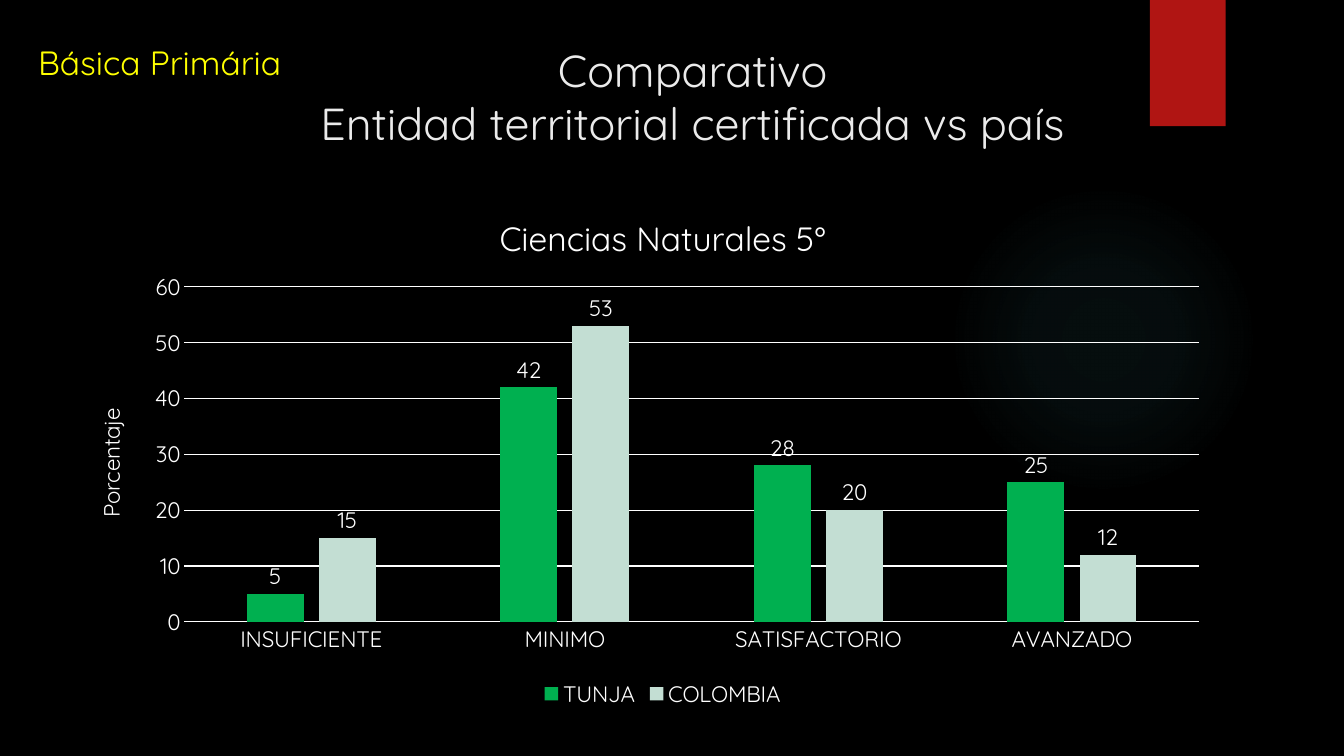
from lxml import etree
from pptx import Presentation
from pptx.chart.data import CategoryChartData
from pptx.dml.color import RGBColor
from pptx.enum.chart import (XL_CHART_TYPE, XL_LABEL_POSITION,
                             XL_LEGEND_POSITION, XL_TICK_MARK)
from pptx.enum.shapes import MSO_SHAPE
from pptx.enum.text import PP_ALIGN
from pptx.oxml import parse_xml
from pptx.oxml.ns import nsdecls, qn
from pptx.util import Cm, Pt

COLUMNS = XL_CHART_TYPE.COLUMN_CLUSTERED
OUTSIDE = XL_LABEL_POSITION.OUTSIDE_END
BOTTOM = XL_LEGEND_POSITION.BOTTOM
NO_TICK = XL_TICK_MARK.NONE
RECT, OVAL = MSO_SHAPE.RECTANGLE, MSO_SHAPE.OVAL
LEFT, CENTER = PP_ALIGN.LEFT, PP_ALIGN.CENTER

COLORS = {
    "back": "000000", "glow": "50B9C1", "ribbon": "B01513",
    "title": "EBEBEB", "level": "FFFF00", "white": "FFFFFF",
    "TUNJA": "00B050", "COLOMBIA": "C3DED3",
}
LEVELS = ["INSUFICIENTE", "MINIMO", "SATISFACTORIO", "AVANZADO"]
SCORES = {"TUNJA": [5, 42, 28, 25], "COLOMBIA": [15, 53, 20, 12]}


def rgb(name):
    return RGBColor.from_string(COLORS[name])


def paint(fill, name):
    fill.solid()
    fill.fore_color.rgb = rgb(name)


class Deck:
    font = "Quicksand"

    def __init__(self, width, height):
        self.prs = Presentation()
        self.prs.slide_width, self.prs.slide_height = Cm(width), Cm(height)
        self.slide = self.prs.slides.add_slide(self.prs.slide_layouts[6])
        paint(self.slide.background.fill, "back")

    def style(self, font, size, color="white"):
        font.name, font.size, font.bold = self.font, Pt(size), False
        font.color.rgb = rgb(color)

    def shape(self, kind, box, color):
        shape = self.slide.shapes.add_shape(kind, *map(Cm, box))
        shape.shadow.inherit = False
        shape.line.fill.background()
        paint(shape.fill, color)
        return shape

    def glow(self, box, color, stops):
        """Draw a round gradient; stops are (position, opacity) in percent."""
        props = self.shape(OVAL, box, color)._element.spPr
        grad = parse_xml(f'<a:gradFill {nsdecls("a")}><a:gsLst/><a:path path="circle">'
                         '<a:fillToRect l="50000" t="50000" r="50000" b="50000"/>'
                         '</a:path></a:gradFill>')
        for pos, alpha in stops:
            stop = etree.SubElement(grad[0], qn("a:gs"), pos=str(pos * 1000))
            tint = etree.SubElement(stop, qn("a:srgbClr"), val=COLORS[color])
            etree.SubElement(tint, qn("a:alpha"), val=str(alpha * 1000))
        props.replace(props.find(qn("a:solidFill")), grad)

    def text(self, text, box, size, color, align=LEFT):
        frame = self.slide.shapes.add_textbox(*map(Cm, box)).text_frame
        frame.word_wrap = True
        para = frame.paragraphs[0]
        para.text, para.alignment = text, align
        for run in para.runs:
            self.style(run.font, size, color)

    def title(self, owner, text, size):
        """Give a chart or an axis its title."""
        owner.has_title = True
        frame = (owner.chart_title if hasattr(owner, "chart_title")
                 else owner.axis_title).text_frame
        frame.text = text
        self.style(frame.paragraphs[0].runs[0].font, size)

    def axis(self, axis):
        axis.major_tick_mark = axis.minor_tick_mark = NO_TICK
        self.style(axis.tick_labels.font, 16)

    def rule(self, line):
        line.color.rgb, line.width = rgb("white"), Pt(0.75)

    def layout(self, chart, **place):
        """Fix the inner plot area as fractions of the chart."""
        area = chart._chartSpace.chart.plotArea
        old = area.find(qn("c:layout"))
        if old is not None:
            area.remove(old)
        layout = parse_xml(f'<c:layout {nsdecls("c")}><c:manualLayout>'
                           '<c:layoutTarget val="inner"/><c:xMode val="edge"/>'
                           '<c:yMode val="edge"/></c:manualLayout></c:layout>')
        for key, value in place.items():
            etree.SubElement(layout[0], qn(f"c:{key}"), val=str(value))
        area.insert(0, layout)

    def chart(self, box, title, unit, cats, scores):
        data = CategoryChartData()
        data.categories = cats
        for name, values in scores.items():
            data.add_series(name, values)
        chart = self.slide.shapes.add_chart(COLUMNS, *map(Cm, box), data).chart
        self.style(chart.font, 10)
        self.title(chart, title, 24)
        self.layout(chart, x=0.087, y=0.183, w=0.876, h=0.644)

        self.axis(chart.category_axis)
        self.rule(chart.category_axis.format.line)
        scale = chart.value_axis
        self.axis(scale)
        self.title(scale, unit, 16)
        scale.minimum_scale, scale.maximum_scale, scale.major_unit = 0, 60, 10
        scale.format.line.fill.background()
        self.rule(scale.major_gridlines.format.line)

        chart.has_legend = True
        chart.legend.position = BOTTOM
        chart.legend.include_in_layout = False
        self.style(chart.legend.font, 16)

        plot = chart.plots[0]
        plot.vary_by_categories = False
        plot.gap_width, plot.overlap = 219, -27
        for series in plot.series:
            paint(series.format.fill, series.name)
            series.invert_if_negative = False
            labels = series.data_labels
            labels.show_value, labels.position = True, OUTSIDE
            self.style(labels.font, 16)


def main():
    deck = Deck(33.87, 19.05)
    deck.glow((23.9, 4.65, 7.82, 7.82), "glow", [(0, 7), (36, 6), (69, 0)])
    deck.shape(RECT, (28.98, 0, 1.91, 3.18), "ribbon")
    deck.chart((2.11, 4.83, 29.18, 13.11), "Ciencias Naturales 5°",
               "Porcentaje", LEVELS, SCORES)
    deck.text("Comparativo\vEntidad territorial certificada vs país",
              (7.01, 0.94, 20.9, 3.89), 32, "title", CENTER)
    deck.text("Básica Primária", (0.71, 0.94, 6.81, 1.27), 24, "level")
    deck.prs.save("out.pptx")


if __name__ == "__main__":
    main()
